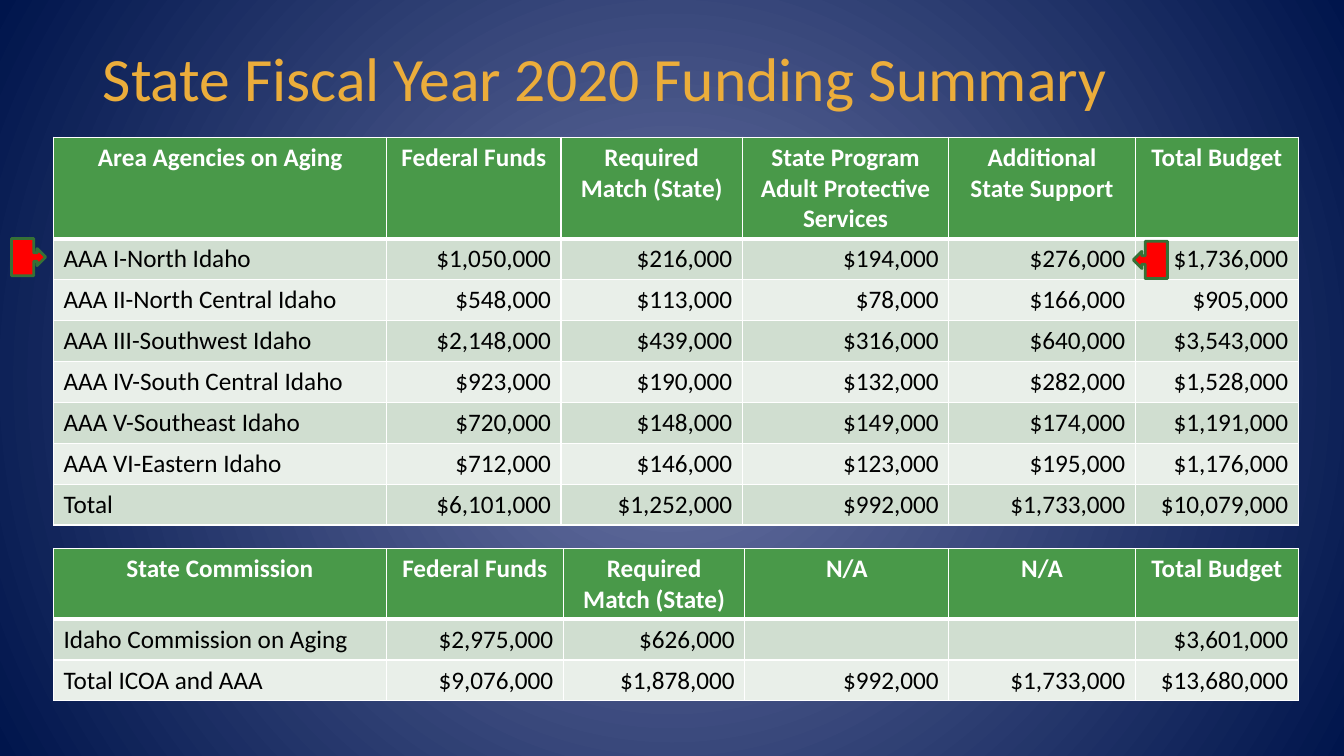
from dataclasses import dataclass

from lxml import etree
from pptx import Presentation
from pptx import util as u
from pptx.dml.color import RGBColor
from pptx.enum import shapes, text
from pptx.oxml import ns


@dataclass(frozen=True)
class Theme:
    font: str = "Calibri"
    title_size: int = 44
    table_size: int = 18
    glow: str = "6D77A7"
    navy: str = "00154C"
    gold: str = "EBAD3B"
    green: str = "499949"
    dark_green: str = "367136"
    bands: tuple = ("D0DED0", "E9EFE9")
    red: str = "FF0000"
    white: str = "FFFFFF"
    black: str = "000000"


def rgb(value):
    return RGBColor.from_string(value)


def write(frame, words, *, font, size, color, bold=False, align=text.PP_ALIGN.LEFT, spacing=None):
    paragraph = frame.paragraphs[0]
    paragraph.alignment = align
    paragraph.line_spacing = spacing
    run = paragraph.add_run()
    run.text = words
    run.font.name = font
    run.font.size = u.Pt(size)
    run.font.bold = bold
    run.font.color.rgb = rgb(color)


class SlideBuilder:
    def __init__(self, slide, theme):
        self.slide = slide
        self.theme = theme

    def background(self):
        fill = self.slide.background.fill
        fill.gradient()
        for stop, color in zip(fill.gradient_stops, (self.theme.glow, self.theme.navy)):
            stop.color.rgb = rgb(color)
        gradient = next(self.slide.element.iter(ns.qn("a:gradFill")))
        gradient.remove(gradient.find(ns.qn("a:lin")))
        circle = etree.SubElement(gradient, ns.qn("a:path"), path="circle")
        center = dict.fromkeys("ltrb", "50000")
        etree.SubElement(circle, ns.qn("a:fillToRect"), center)

    def title(self, words, left, top, width, height):
        box = self.slide.shapes.add_textbox(*map(u.Cm, (left, top, width, height)))
        frame = box.text_frame
        frame.word_wrap = True
        frame.vertical_anchor = text.MSO_ANCHOR.MIDDLE
        write(frame, words, font=self.theme.font, size=self.theme.title_size,
              color=self.theme.gold, spacing=0.9)

    def borders(self, cell, top, bottom):
        properties = cell._tc.get_or_add_tcPr()
        sides = {"L": 1, "R": 1, "T": top, "B": bottom}
        for index, (side, points) in enumerate(sides.items()):
            line = etree.Element(ns.qn(f"a:ln{side}"), w=str(u.Pt(points)))
            solid = etree.SubElement(line, ns.qn("a:solidFill"))
            etree.SubElement(solid, ns.qn("a:srgbClr"), val=self.theme.white)
            properties.insert(index, line)

    def cell(self, cell, words, row, column):
        header = row == 0
        cell.fill.solid()
        cell.fill.fore_color.rgb = rgb(self.theme.green if header else self.theme.bands[(row - 1) % 2])
        self.borders(cell, top=3 if row == 1 else 1, bottom=3 if header else 1)
        if header:
            align = text.PP_ALIGN.CENTER
        else:
            align = text.PP_ALIGN.RIGHT if column else text.PP_ALIGN.LEFT
        write(cell.text_frame, words, font=self.theme.font, size=self.theme.table_size,
              color=self.theme.white if header else self.theme.black, bold=header, align=align)

    def table(self, rows, left, top, widths, header_height, row_height=1.03):
        heights = [header_height] + [row_height] * (len(rows) - 1)
        area = map(u.Cm, (left, top, sum(widths), sum(heights)))
        table = self.slide.shapes.add_table(len(rows), len(widths), *area).table
        for column, width in zip(table.columns, widths):
            column.width = u.Cm(width)
        for row, height in zip(table.rows, heights):
            row.height = u.Cm(height)
        for r, values in enumerate(rows):
            for c, words in enumerate(values):
                self.cell(table.cell(r, c), words, r, c)

    def marker(self, left, top, rotation):
        marker = self.slide.shapes.add_shape(
            shapes.MSO_SHAPE.UP_ARROW_CALLOUT, *map(u.Cm, (left, top, 0.94, 0.86)))
        marker.rotation = rotation
        marker.shadow.inherit = False
        marker.fill.solid()
        marker.fill.fore_color.rgb = rgb(self.theme.red)
        marker.line.color.rgb = rgb(self.theme.dark_green)
        marker.line.width = u.Pt(2)


AGENCIES = [
    ("Area Agencies on Aging", "Federal Funds", "Required Match (State)",
     "State Program Adult Protective Services", "Additional State Support", "Total Budget"),
    ("AAA I-North Idaho", "$1,050,000", "$216,000", "$194,000", "$276,000", "$1,736,000"),
    ("AAA II-North Central Idaho", "$548,000", "$113,000", "$78,000", "$166,000", "$905,000"),
    ("AAA III-Southwest Idaho", "$2,148,000", "$439,000", "$316,000", "$640,000", "$3,543,000"),
    ("AAA IV-South Central Idaho", "$923,000", "$190,000", "$132,000", "$282,000", "$1,528,000"),
    ("AAA V-Southeast Idaho", "$720,000", "$148,000", "$149,000", "$174,000", "$1,191,000"),
    ("AAA VI-Eastern Idaho", "$712,000", "$146,000", "$123,000", "$195,000", "$1,176,000"),
    ("Total", "$6,101,000", "$1,252,000", "$992,000", "$1,733,000", "$10,079,000"),
]
COMMISSION = [
    ("State Commission", "Federal Funds", "Required Match (State)", "N/A", "N/A", "Total Budget"),
    ("Idaho Commission on Aging", "$2,975,000", "$626,000", "", "", "$3,601,000"),
    ("Total ICOA and AAA", "$9,076,000", "$1,878,000", "$992,000", "$1,733,000", "$13,680,000"),
]


def main():
    deck = Presentation()
    deck.slide_width, deck.slide_height = u.Cm(33.87), u.Cm(19.05)
    funding = SlideBuilder(deck.slides.add_slide(deck.slide_layouts[6]), Theme())
    funding.background()
    funding.title("State Fiscal Year 2020 Funding Summary", 2.34, 1.02, 29.21, 2.08)
    funding.table(AGENCIES, 1.35, 3.46, (8.4, 4.39, 4.57, 5.2, 4.7, 4.11), header_height=2.56)
    funding.table(COMMISSION, 1.35, 13.82, (8.38, 4.47, 4.57, 5.14, 4.7, 4.11), header_height=1.78)
    funding.marker(28.52, 6.12, rotation=270)
    funding.marker(0.25, 6.05, rotation=90)
    deck.save("out.pptx")


if __name__ == "__main__":
    main()
